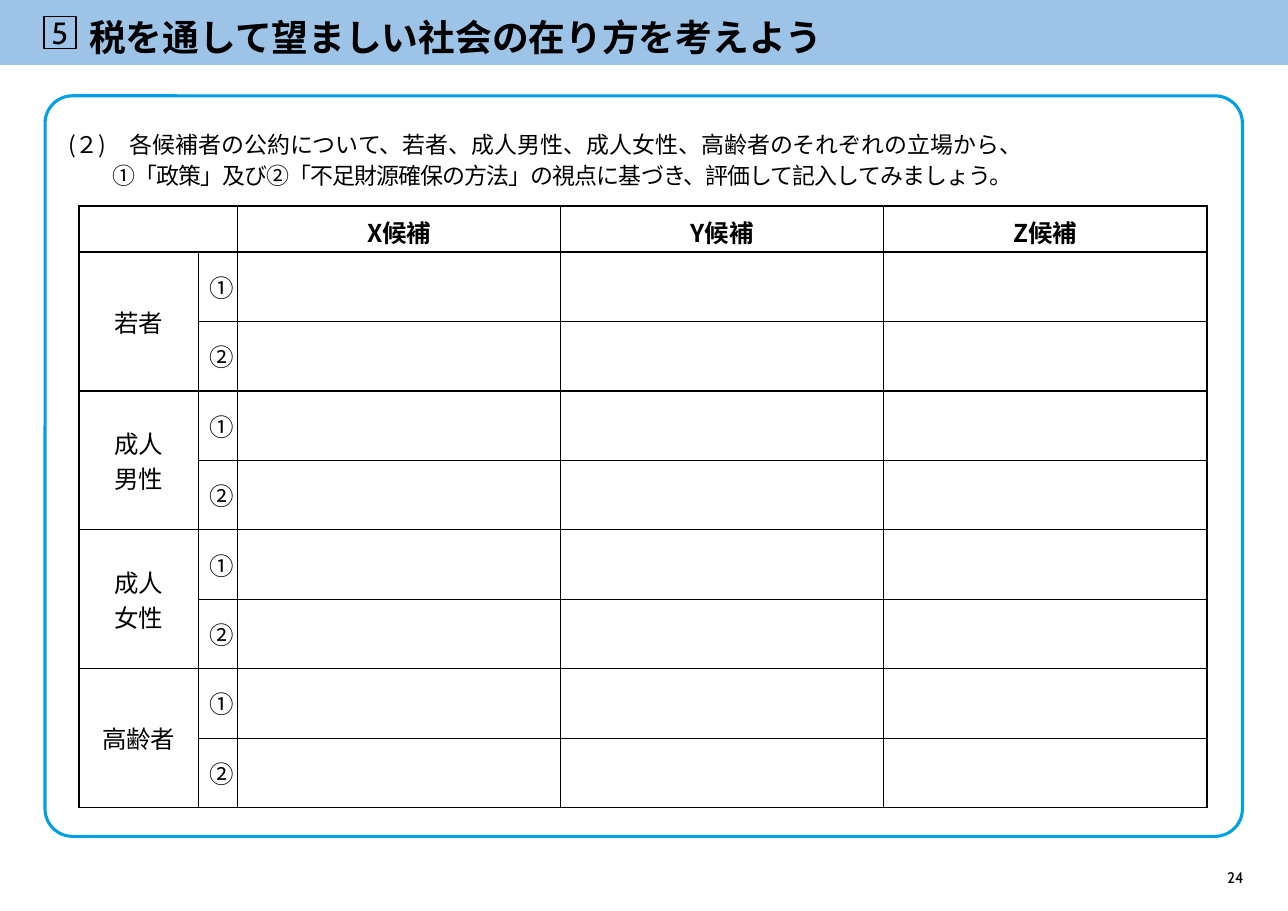
import dataclasses
import itertools
import typing

import pptx
import pptx.dml.color
import pptx.enum.shapes
import pptx.enum.text
import pptx.oxml
import pptx.oxml.ns
import pptx.util

Cm = pptx.util.Cm
Pt = pptx.util.Pt
Align = pptx.enum.text.PP_ALIGN
Preset = pptx.enum.shapes.MSO_SHAPE


@dataclasses.dataclass(frozen=True)
class Theme:
    band: str = "9DC3E6"
    frame: str = "00A0E9"
    ink: str = "000000"
    paper: str = "FFFFFF"
    heading_font: str = "Cabin"
    body_font: str = "Noto Sans CJK JP"
    title_size: float = 24
    number_size: float = 20
    table_size: float = 16
    body_size: float = 15
    page_size: float = 10
    thin: float = 0.5
    thick: float = 1


THEME = Theme()


@dataclasses.dataclass(frozen=True)
class Box:
    left: float
    top: float
    width: float
    height: float

    def lengths(self) -> tuple:
        return tuple(Cm(value) for value in dataclasses.astuple(self))


@dataclasses.dataclass(frozen=True)
class Panel:
    box: Box
    preset: typing.Any = Preset.RECTANGLE
    fill: typing.Optional[str] = None
    line: typing.Optional[str] = None
    line_width: float = 1
    corner: typing.Optional[float] = None


@dataclasses.dataclass(frozen=True)
class Label:
    box: Box
    text: str
    size: float
    bold: bool = False
    align: typing.Any = Align.LEFT


BAND = Panel(Box(0, 0, 29.7, 1.5), fill=THEME.band)
NUMBER_FRAME = Panel(Box(1.02, 0.38, 0.74, 0.74), line=THEME.ink)
PAGE_FRAME = Panel(
    Box(1.04, 2.21, 27.61, 17.07),
    preset=Preset.ROUNDED_RECTANGLE,
    line=THEME.frame,
    line_width=2,
    corner=0.037,
)
LABELS = (
    Label(Box(2.06, 0.33, 27, 0.86), "税を通して望ましい社会の在り方を考えよう", THEME.title_size, bold=True),
    Label(Box(1.07, 0.33, 0.61, 0.86), "5", THEME.number_size, align=Align.CENTER),
    Label(Box(28.3, 20.02, 0.38, 0.43), "24", THEME.page_size, align=Align.RIGHT),
)
INSTRUCTION_BOX = Box(1.57, 2.92, 23.75, 1.47)
QUESTION = "(２)\u3000各候補者の公約について、若者、成人男性、成人女性、高齢者のそれぞれの立場から、".replace("\u3000", "　")
VIEWPOINTS = "①「政策」及び②「不足財源確保の方法」の視点に基づき、評価して記入してみましょう。"
TABLE_BOX = Box(1.82, 4.75, 26.02, 13.84)
COLUMN_WIDTHS = (2.76, 0.9, 7.45, 7.45, 7.45)
HEADER_HEIGHT = 1.06
ROW_HEIGHT = 1.6
CANDIDATES = ("X候補", "Y候補", "Z候補")
VOTERS = ("若者", "成人\n男性", "成人\n女性", "高齢者")
MARKS = ("①", "②")


def color(value: str) -> pptx.dml.color.RGBColor:
    return pptx.dml.color.RGBColor.from_string(value)


def write_text(
    paragraph,
    text: str,
    *,
    size: float,
    font: str = THEME.body_font,
    bold: bool = False,
    align=Align.LEFT,
    line_spacing: typing.Optional[float] = None,
    indent: float = 0,
    tracking: float = 0,
) -> None:
    paragraph.alignment = align
    if line_spacing:
        paragraph.line_spacing = Pt(line_spacing)
    if indent:
        paragraph._p.get_or_add_pPr().set("marL", str(Cm(indent)))
    run = paragraph.add_run()
    run.text = text
    run.font.size = Pt(size)
    run.font.bold = bold
    run.font.name = font
    run.font.color.rgb = color(THEME.ink)
    properties = run._r.get_or_add_rPr()
    if tracking:
        properties.set("spc", str(round(tracking * 100)))
    east_asian = pptx.oxml.parse_xml(
        f'<a:ea {pptx.oxml.ns.nsdecls("a")} typeface="{THEME.body_font}"/>'
    )
    properties.find(pptx.oxml.ns.qn("a:latin")).addnext(east_asian)


def add_text_frame(slide, box: Box, wrap: bool):
    text_frame = slide.shapes.add_textbox(*box.lengths()).text_frame
    text_frame.margin_left = text_frame.margin_right = 0
    text_frame.margin_top = text_frame.margin_bottom = 0
    text_frame.word_wrap = wrap
    return text_frame


def draw_panel(slide, panel: Panel) -> None:
    shape = slide.shapes.add_shape(panel.preset, *panel.box.lengths())
    shape.shadow.inherit = False
    if panel.corner is not None:
        shape.adjustments[0] = panel.corner
    if panel.fill:
        shape.fill.solid()
        shape.fill.fore_color.rgb = color(panel.fill)
    else:
        shape.fill.background()
    if panel.line:
        shape.line.color.rgb = color(panel.line)
        shape.line.width = Pt(panel.line_width)
    else:
        shape.line.fill.background()


def draw_label(slide, label: Label) -> None:
    text_frame = add_text_frame(slide, label.box, wrap=False)
    write_text(
        text_frame.paragraphs[0], label.text, size=label.size,
        font=THEME.heading_font, bold=label.bold, align=label.align,
    )


def draw_instruction(slide) -> None:
    text_frame = add_text_frame(slide, INSTRUCTION_BOX, wrap=True)
    body = {"size": THEME.body_size, "line_spacing": 20.3}
    write_text(text_frame.paragraphs[0], QUESTION, **body)
    write_text(text_frame.add_paragraph(), VIEWPOINTS, indent=1.02, tracking=-0.6, **body)


def style_cell(cell, row: int, column: int) -> None:
    inside_label = row > 0
    thin_sides = {
        "L": inside_label and column == 1,
        "R": inside_label and column == 0,
        "T": inside_label and row % 2 == 0,
        "B": row % 2 == 1 or row == len(VOTERS) * len(MARKS),
    }
    properties = cell._tc.get_or_add_tcPr()
    for side, is_thin in thin_sides.items():
        width = Pt(THEME.thin if is_thin else THEME.thick)
        properties.append(pptx.oxml.parse_xml(
            f'<a:ln{side} {pptx.oxml.ns.nsdecls("a")} w="{width}"><a:solidFill>'
            f'<a:srgbClr val="{THEME.ink}"/></a:solidFill></a:ln{side}>'
        ))
    cell.fill.solid()
    cell.fill.fore_color.rgb = color(THEME.paper)
    cell.vertical_anchor = pptx.enum.text.MSO_ANCHOR.MIDDLE


def write_cell(cell, text: str, bold: bool = False) -> None:
    for index, line in enumerate(text.split("\n")):
        paragraph = cell.text_frame.add_paragraph() if index else cell.text_frame.paragraphs[0]
        write_text(paragraph, line, size=THEME.table_size, bold=bold, align=Align.CENTER)


def draw_table(slide) -> None:
    row_count = 1 + len(VOTERS) * len(MARKS)
    table = slide.shapes.add_table(row_count, len(COLUMN_WIDTHS), *TABLE_BOX.lengths()).table
    table.first_row = table.horz_banding = False
    for column, width in zip(table.columns, COLUMN_WIDTHS):
        column.width = Cm(width)
    for index, row in enumerate(table.rows):
        row.height = Cm(ROW_HEIGHT if index else HEADER_HEIGHT)
    for row, column in itertools.product(range(row_count), range(len(COLUMN_WIDTHS))):
        style_cell(table.cell(row, column), row, column)
    table.cell(0, 0).merge(table.cell(0, 1))
    for column, candidate in enumerate(CANDIDATES, start=2):
        cell = table.cell(0, column)
        cell.margin_bottom = 0
        write_cell(cell, candidate, bold=True)
    for index, voter in enumerate(VOTERS):
        first_row = 1 + index * len(MARKS)
        table.cell(first_row, 0).merge(table.cell(first_row + 1, 0))
        write_cell(table.cell(first_row, 0), voter)
        for offset, mark in enumerate(MARKS):
            write_cell(table.cell(first_row + offset, 1), mark)


def main() -> None:
    presentation = pptx.Presentation()
    presentation.slide_width = Cm(29.7)
    presentation.slide_height = Cm(21)
    slide = presentation.slides.add_slide(presentation.slide_layouts[6])
    for panel in (BAND, NUMBER_FRAME):
        draw_panel(slide, panel)
    draw_table(slide)
    for label in LABELS:
        draw_label(slide, label)
    draw_instruction(slide)
    draw_panel(slide, PAGE_FRAME)
    presentation.save("out.pptx")


if __name__ == "__main__":
    main()
